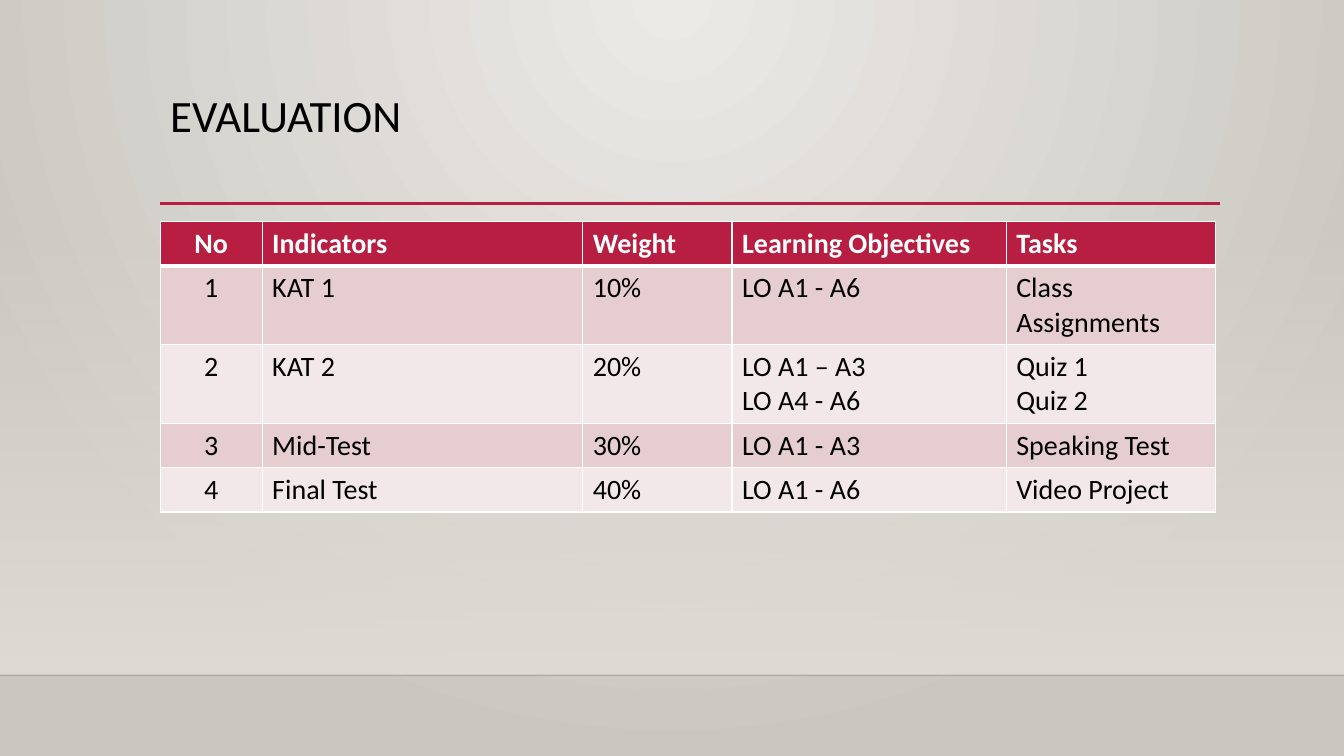
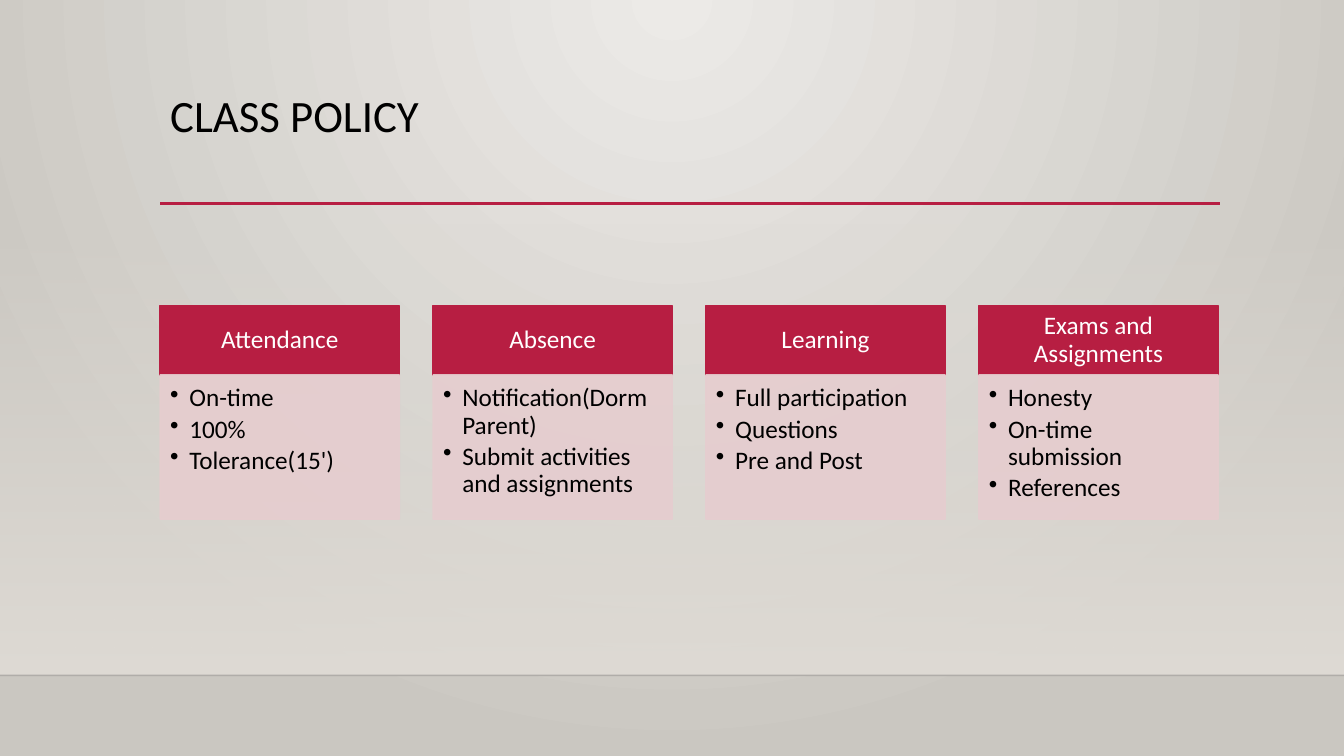
from lxml.etree import SubElement as Sub
from pptx import Presentation
from pptx.dml.color import RGBColor
from pptx.enum.shapes import MSO_CONNECTOR as Link, MSO_SHAPE as Kind
from pptx.enum.text import MSO_ANCHOR as Anchor, PP_ALIGN as Align
from pptx.oxml.ns import qn
from pptx.util import Inches, Pt

RED, ROSE, BLUSH = "B71E42", "E6CDCF", "F3E8E9"
BLACK, WHITE = "000000", "FFFFFF"
GLOW, SAND = ("ECEAE7", "CAC7C1"), ("DFDBD5", "DFDBD5")
FONT = "Calibri"
WIDE, TALL, FLOOR = 13.33, 7.5, 6.7
LEFT, SPAN = 1.59, 10.49

GRADES = [
    ["No", "Indicators", "Weight", "Learning Objectives", "Tasks"],
    ["1", "KAT 1", "10%", "LO A1 - A6", "Class Assignments"],
    ["2", "KAT 2", "20%", "LO A1 – A3\nLO A4 - A6", "Quiz 1\nQuiz 2"],
    ["3", "Mid-Test", "30%", "LO A1 - A3", "Speaking Test"],
    ["4", "Final Test", "40%", "LO A1 - A6", "Video Project"],
]
COLS = [1.01, 3.18, 1.48, 2.72, 2.08]
ROWS = [0.44, 0.78, 0.78, 0.44, 0.44]

RULES = [
    ("Attendance", ["On-time", "100%", "Tolerance(15')"]),
    ("Absence", ["Notification(Dorm Parent)", "Submit activities and assignments"]),
    ("Learning", ["Full participation", "Questions", "Pre and Post"]),
    ("Exams and Assignments", ["Honesty", "On-time submission", "References"]),
]
CARD, HEAD, BODY, TOP = 2.37, 0.69, 1.43, 3.03


def tint(code):
    """Turn a hex string into a colour."""
    return RGBColor.from_string(code)


def fade(host, share):
    """Make the solid colours below an element see-through."""
    for color in host.iter(qn("a:srgbClr")):
        Sub(color, qn("a:alpha"), val=str(share * 1000))


def blend(fill, codes):
    """Give a fill a two-colour gradient running downward."""
    fill.gradient()
    fill.gradient_angle = 270
    for stop, code in zip(fill.gradient_stops, codes):
        stop.color.rgb = tint(code)


def write(frame, lines, size, code, align=Align.LEFT, bold=False, lead=None, dots=False):
    """Write one paragraph per line of text."""
    frame.word_wrap = True
    for i, line in enumerate(lines):
        para = frame.add_paragraph() if i else frame.paragraphs[0]
        if dots:
            props = para._p.get_or_add_pPr()
            props.set("marL", str(Inches(0.19)))
            props.set("indent", str(-Inches(0.19)))
            Sub(props, qn("a:buChar"), char="•")
            para.space_after = Pt(3)
        para.alignment = align
        if lead:
            para.line_spacing = lead
        run = para.add_run()
        run.text = line
        font = run.font
        font.name, font.size, font.bold = FONT, Pt(size), bold
        font.color.rgb = tint(code)


def rule(slide, left, right, top, code, width):
    """Draw a level line without a shadow."""
    line = slide.shapes.add_connector(
        Link.STRAIGHT, Inches(left), Inches(top), Inches(right), Inches(top))
    line.line.color.rgb = tint(code)
    line.line.width = Pt(width)
    Sub(line._element.spPr, qn("a:effectLst"))
    return line


def block(slide, left, top, width, height):
    """Add a rectangle without a shadow."""
    box = slide.shapes.add_shape(
        Kind.RECTANGLE, Inches(left), Inches(top), Inches(width), Inches(height))
    box.shadow.inherit = False
    return box


def panel(slide, left, top, height, code, pads, anchor):
    """Add a filled card part and return it."""
    box = block(slide, left, top, CARD, height)
    box.fill.solid()
    box.fill.fore_color.rgb = box.line.color.rgb = tint(code)
    box.line.width = Pt(1.25)
    frame = box.text_frame
    frame.vertical_anchor = anchor
    (frame.margin_left, frame.margin_top,
     frame.margin_right, frame.margin_bottom) = map(Inches, pads)
    return box


def start(deck, title):
    """Add a slide with the shared backdrop and title."""
    slide = deck.slides.add_slide(deck.slide_layouts[6])
    blend(slide.background.fill, GLOW)
    grad = slide.element.find(".//" + qn("a:gradFill"))
    grad.remove(grad.find(qn("a:lin")))
    ring = Sub(grad, qn("a:path"), path="circle")
    Sub(ring, qn("a:fillToRect"), l="43000", t="0", r="43000", b="100000")

    band = block(slide, 0, 2.21, WIDE, FLOOR - 2.21)
    blend(band.fill, SAND)
    fade(band._element.find(".//" + qn("a:gs")), 0)
    band.line.fill.background()
    edge = rule(slide, 0, WIDE, FLOOR, "000001", 1)
    fade(edge._element, 20)
    rule(slide, LEFT, 12.1, 2.02, RED, 2.5)

    box = slide.shapes.add_textbox(Inches(LEFT), Inches(0.88), Inches(10.5), Inches(1.15))
    write(box.text_frame, [title], 32, BLACK, lead=0.9)
    return slide


def border(cell, row):
    """Draw white cell borders, thick under the header."""
    props = cell._tc.get_or_add_tcPr()
    thick = {0: "lnB", 1: "lnT"}.get(row)
    for side in ("lnL", "lnR", "lnT", "lnB"):
        width = Pt(3 if side == thick else 1)
        line = Sub(props, qn("a:" + side), w=str(width))
        Sub(Sub(line, qn("a:solidFill")), qn("a:srgbClr"), val=WHITE)


def grades(deck):
    """Build the evaluation table slide."""
    slide = start(deck, "EVALUATION")
    table = slide.shapes.add_table(
        len(ROWS), len(COLS), Inches(LEFT), Inches(2.2),
        Inches(sum(COLS)), Inches(sum(ROWS))).table
    for col, width in zip(table.columns, COLS):
        col.width = Inches(width)
    for r, (row, height) in enumerate(zip(GRADES, ROWS)):
        table.rows[r].height = Inches(height)
        for c, text in enumerate(row):
            cell = table.cell(r, c)
            border(cell, r)
            cell.fill.solid()
            cell.fill.fore_color.rgb = tint(RED if r == 0 else ROSE if r % 2 else BLUSH)
            write(cell.text_frame, text.split("\n"), 20, BLACK if r else WHITE,
                  Align.LEFT if c else Align.CENTER, bold=r == 0)


def policy(deck):
    """Build the class policy slide."""
    slide = start(deck, "CLASS POLICY")
    step = (SPAN - CARD) / (len(RULES) - 1)
    for i, (name, points) in enumerate(RULES):
        left = LEFT + i * step
        head = panel(slide, left, TOP, HEAD, RED, (0.14, 0.08, 0.14, 0.08), Anchor.MIDDLE)
        write(head.text_frame, [name], 18, WHITE, Align.CENTER, lead=0.9)
        body = panel(slide, left, TOP + HEAD, BODY, ROSE, (0.1, 0.1, 0.14, 0.16), Anchor.TOP)
        fade(body._element.spPr, 90)
        write(body.text_frame, points, 18, BLACK, lead=0.9, dots=True)


def main():
    """Build and save the deck."""
    deck = Presentation()
    deck.slide_width, deck.slide_height = Inches(WIDE), Inches(TALL)
    grades(deck)
    policy(deck)
    deck.save("out.pptx")


if __name__ == "__main__":
    main()
